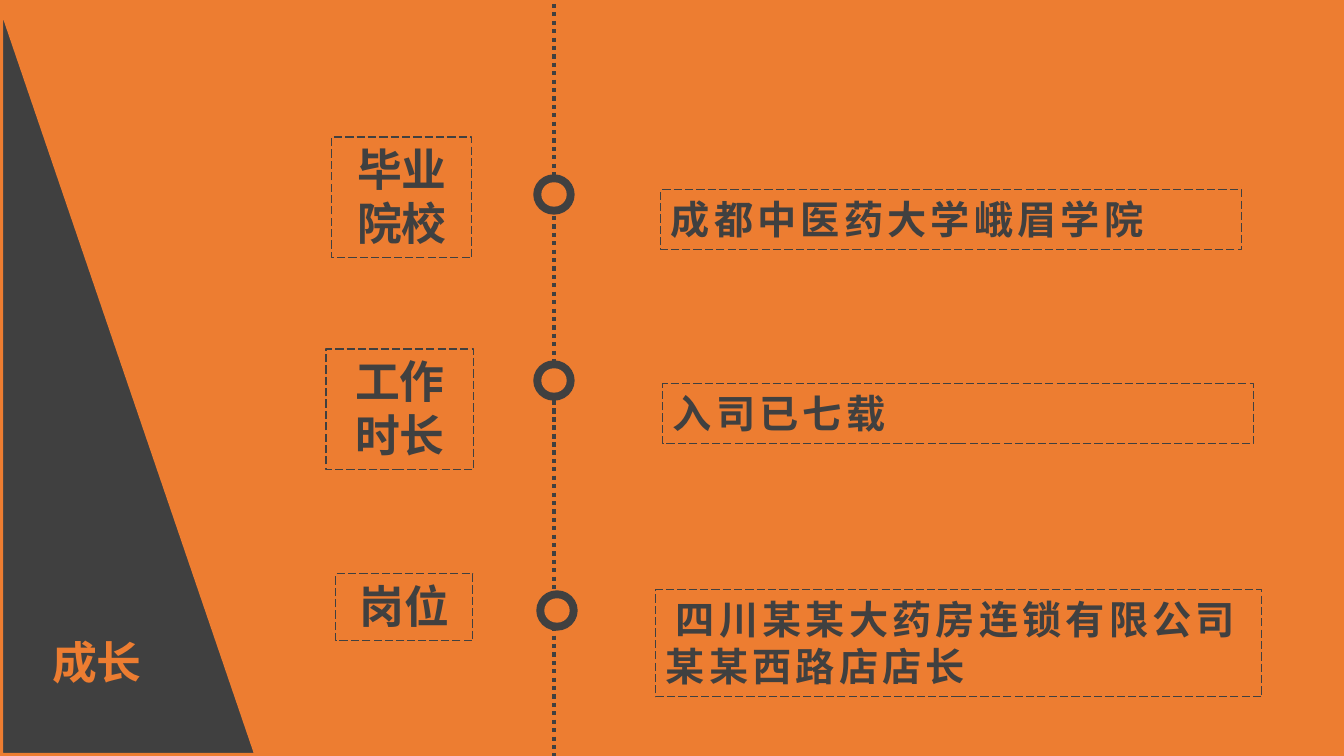
from lxml import etree
from pptx import Presentation
from pptx import util as u
from pptx.dml.color import RGBColor
from pptx.enum import dml, shapes, text
from pptx.oxml.ns import qn

PX = 914400 / 100.8
FONT = "Noto Sans CJK SC"
COLORS = {"orange": RGBColor.from_string("ED7D31"),
          "gray": RGBColor.from_string("404040")}


def add_filled(kind, box, fill, line, line_pt):
    shape = slide.shapes.add_shape(kind, *(round(n * PX) for n in box))
    shape.shadow.inherit = False
    shape.fill.solid()
    shape.fill.fore_color.rgb = COLORS[fill]
    shape.line.color.rgb = COLORS[line]
    shape.line.width = u.Pt(line_pt)
    return shape


def write(shape, words, size, color, align, spacing=0, first_indent=0):
    frame = shape.text_frame
    frame.word_wrap = True
    frame.auto_size = text.MSO_AUTO_SIZE.SHAPE_TO_FIT_TEXT
    frame.vertical_anchor = text.MSO_ANCHOR.TOP
    para = frame.paragraphs[0]
    para.text = words
    para.alignment = align
    font = para.font
    font.name, font.size, font.bold = FONT, u.Pt(size), True
    font.color.rgb = COLORS[color]
    props = para._p.get_or_add_pPr()
    props.set("indent", str(round(first_indent * PX)))
    run_props = props.find(qn("a:defRPr"))
    run_props.set("spc", str(spacing * 100))
    latin = run_props.find(qn("a:latin"))
    east_asian = etree.Element(qn("a:ea"), typeface=FONT)
    latin.addnext(east_asian)


deck = Presentation()
deck.slide_width, deck.slide_height = round(1344 * PX), round(756 * PX)
slide = deck.slides.add_slide(deck.slide_layouts[6])
slide.background.fill.solid()
slide.background.fill.fore_color.rgb = COLORS["orange"]

# Corner triangle with the section title
add_filled(shapes.MSO_SHAPE.RIGHT_TRIANGLE, (0, 0, 258, 756), "gray", "orange", 4.5)
title = slide.shapes.add_textbox(*(round(n * PX) for n in (10, 630, 174, 64)))
write(title, "成长", 32, "orange", text.PP_ALIGN.CENTER)

# Dotted timeline
for top, bottom in [(-13, 175), (216, 449), (400, 756)]:
    timeline = slide.shapes.add_connector(
        shapes.MSO_CONNECTOR.STRAIGHT,
        *(round(n * PX) for n in (554, top, 554, bottom)))
    timeline.line.color.rgb = COLORS["gray"]
    timeline.line.width = u.Pt(3)
    timeline.line.dash_style = dml.MSO_LINE.ROUND_DOT
    etree.SubElement(timeline._element.spPr, qn("a:effectLst"))

# Milestones: ring corner, then label and detail with their boxes
milestones = [
    ((534, 175), "毕业院校", (332, 137, 140, 121),
     "成都中医药大学峨眉学院", (661, 190, 581, 60), 0),
    ((534, 361), "工作时长", (326, 349, 148, 121),
     "入司已七载", (663, 384, 591, 60), 0),
    ((537, 591), "岗位", (336, 574, 137, 67),
     "四川某某大药房连锁有限公司某某西路店店长", (656, 590, 606, 107), 10),
]
for (x, y), label, label_box, detail, detail_box, indent in milestones:
    add_filled(shapes.MSO_SHAPE.FLOWCHART_CONNECTOR, (x, y, 40, 39), "gray", "gray", 1)
    add_filled(shapes.MSO_SHAPE.OVAL, (x + 8, y + 8, 24, 23), "orange", "orange", 1)
    for words, box, size, align, spacing, first_indent in [
            (label, label_box, 32, text.PP_ALIGN.CENTER, 0, 0),
            (detail, detail_box, 28, text.PP_ALIGN.LEFT, 3, indent)]:
        frame_box = add_filled(shapes.MSO_SHAPE.RECTANGLE, box, "orange", "gray", 0.75)
        frame_box.fill.background()
        frame_box.line.dash_style = dml.MSO_LINE.LONG_DASH
        write(frame_box, words, size, "gray", align, spacing, first_indent)

deck.save("out.pptx")
